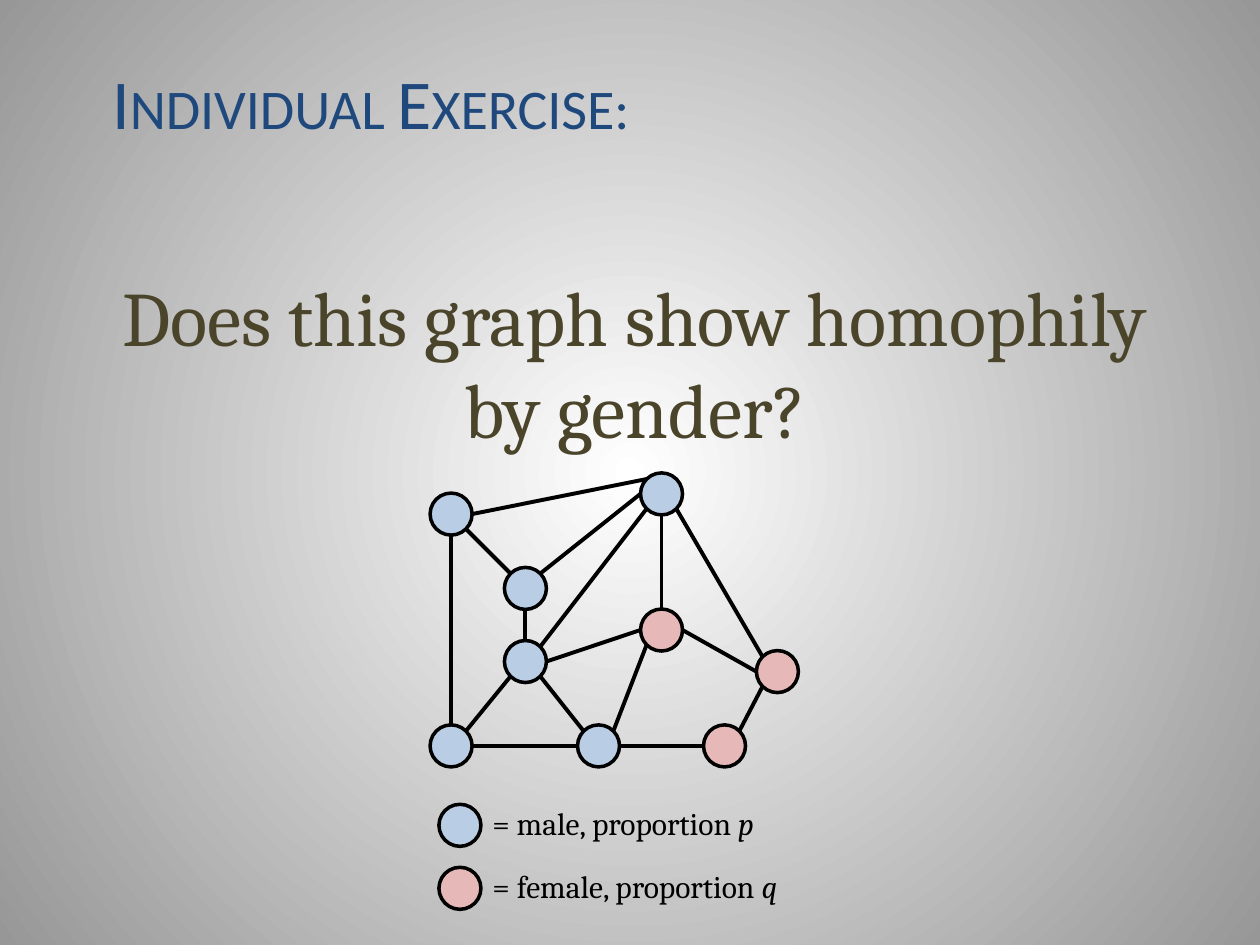
from math import sqrt
from lxml.etree import SubElement
from pptx import Presentation
from pptx.dml.color import RGBColor
from pptx.enum.shapes import MSO_CONNECTOR as LINE, MSO_SHAPE as SHAPE
from pptx.enum.text import MSO_ANCHOR as ANCHOR, MSO_AUTO_SIZE as SIZE, PP_ALIGN as ALIGN
from pptx.oxml.ns import qn
from pptx.util import Inches, Pt

BLACK = RGBColor(0x00, 0x00, 0x00)
WHITE = RGBColor(0xFF, 0xFF, 0xFF)
GREY = RGBColor(0x97, 0x97, 0x97)
NAVY = RGBColor(0x1F, 0x49, 0x7D)
OLIVE = RGBColor(0x4A, 0x45, 0x2A)
MALE = RGBColor(0xB9, 0xCD, 0xE5)
FEMALE = RGBColor(0xE6, 0xB9, 0xB8)
DIAM = 1 / 3


def write(par, text, color, **form):
    run = par.add_run()
    run.text = text
    run.font.color.rgb = color
    for key, val in form.items():
        setattr(run.font, key, val)
    return run


def add_dot(group, x, y, color):
    """Draw a node centred on x, y (inches)."""
    dot = group.shapes.add_shape(SHAPE.OVAL, Inches(x - DIAM / 2), Inches(y - DIAM / 2),
                                 Inches(DIAM), Inches(DIAM))
    dot.shadow.inherit = False
    dot.fill.solid()
    dot.fill.fore_color.rgb = color
    dot.line.color.rgb = BLACK
    dot.line.width = Pt(2)


deck = Presentation()
deck.slide_width, deck.slide_height = Inches(10), Inches(7.5)
slide = deck.slides.add_slide(deck.slide_layouts[1])

# Background: circular gradient, white in the middle
fill = slide.background.fill
fill.gradient()
for stop, color, pos in zip(fill.gradient_stops, (WHITE, GREY), (0, 1)):
    stop.color.rgb = color
    stop.position = pos
lin = next(slide.element.iter(qn("a:lin")))
grad = lin.getparent()
grad.remove(lin)
circle = SubElement(grad, qn("a:path"), path="circle")
SubElement(circle, qn("a:fillToRect"), l="50000", t="50000", r="50000", b="50000")

# Title and question
title, body = slide.shapes.title, slide.placeholders[1]
for box, top, height, anchor, align in ((title, 0.42, 1.49, ANCHOR.TOP, ALIGN.LEFT),
                                        (body, 2.08, 1.58, ANCHOR.MIDDLE, ALIGN.CENTER)):
    box.left, box.top = Inches(0.79), Inches(top)
    box.width, box.height = Inches(8.5), Inches(height)
    box.text_frame.vertical_anchor = anchor
    box.text_frame.paragraphs[0].alignment = align
title.text_frame.auto_size = SIZE.NONE
body.text_frame.auto_size = SIZE.SHAPE_TO_FIT_TEXT

head = write(title.text_frame.paragraphs[0], "Individual Exercise:", NAVY,
             name="Calibri", size=Pt(40))
head.font._element.set("cap", "small")
ask = body.text_frame.paragraphs[0]
write(ask, "Does this graph show homophily by gender?", OLIVE, name="Cambria", size=Pt(44))
props = ask._p.get_or_add_pPr()
props.set("marL", "0")
props.set("indent", "0")
SubElement(props, qn("a:buNone"))

# Graph: node centres, then edges between compass points of the nodes
nodes = {
    "base": (3.58, 5.92, MALE),
    "upper": (4.17, 4.67, MALE),
    "left": (3.58, 4.08, MALE),
    "foot": (5.75, 5.92, FEMALE),
    "right": (6.17, 5.33, FEMALE),
    "top": (5.25, 3.92, MALE),
    "mid": (4.75, 5.92, MALE),
    "hub": (5.25, 5, FEMALE),
    "lower": (4.17, 5.25, MALE),
}
edges = [
    ("base", "E", "mid", "W"), ("upper", "NE", "top", "W"),
    ("top", "NW", "left", "E"), ("upper", "NW", "left", "SE"),
    ("base", "NE", "lower", "SW"), ("base", "N", "left", "S"),
    ("lower", "N", "upper", "S"), ("mid", "E", "foot", "W"),
    ("foot", "NE", "right", "SW"), ("mid", "NE", "hub", "SW"),
    ("lower", "SE", "mid", "NW"), ("lower", "NE", "top", "SW"),
    ("top", "SE", "right", "NW"), ("hub", "E", "right", "W"),
    ("lower", "E", "hub", "W"), ("hub", "N", "top", "S"),
]
graph = slide.shapes.add_group_shape()
for x, y, color in nodes.values():
    add_dot(graph, x, y, color)
for start, out, end, into in edges:
    ends = []
    for name, side in ((start, out), (end, into)):
        x, y, _ = nodes[name]
        reach = DIAM / 2 / sqrt(len(side))
        ends += [Inches(x + reach * (("E" in side) - ("W" in side))),
                 Inches(y + reach * (("S" in side) - ("N" in side)))]
    edge = graph.shapes.add_connector(LINE.STRAIGHT, *ends)
    edge.line.color.rgb = BLACK
    edge.line.width = Pt(2.25)
    SubElement(edge._element.spPr, qn("a:effectLst"))

# Legend
legend = slide.shapes.add_group_shape()
rows = [(MALE, "= male, proportion ", "p", 2.4), (FEMALE, "= female, proportion ", "q", 2.61)]
for i, (color, text, sign, width) in enumerate(rows):
    y = 6.55 + 0.5 * i
    add_dot(legend, 3.65, y, color)
    label = legend.shapes.add_textbox(Inches(3.81), Inches(y - 0.22), Inches(width), Inches(0.4))
    label.text_frame.word_wrap = False
    label.text_frame.auto_size = SIZE.SHAPE_TO_FIT_TEXT
    par = label.text_frame.paragraphs[0]
    write(par, text, BLACK, name="Cambria", size=Pt(18))
    write(par, sign, BLACK, name="Cambria", size=Pt(18), italic=True)

deck.save("out.pptx")
